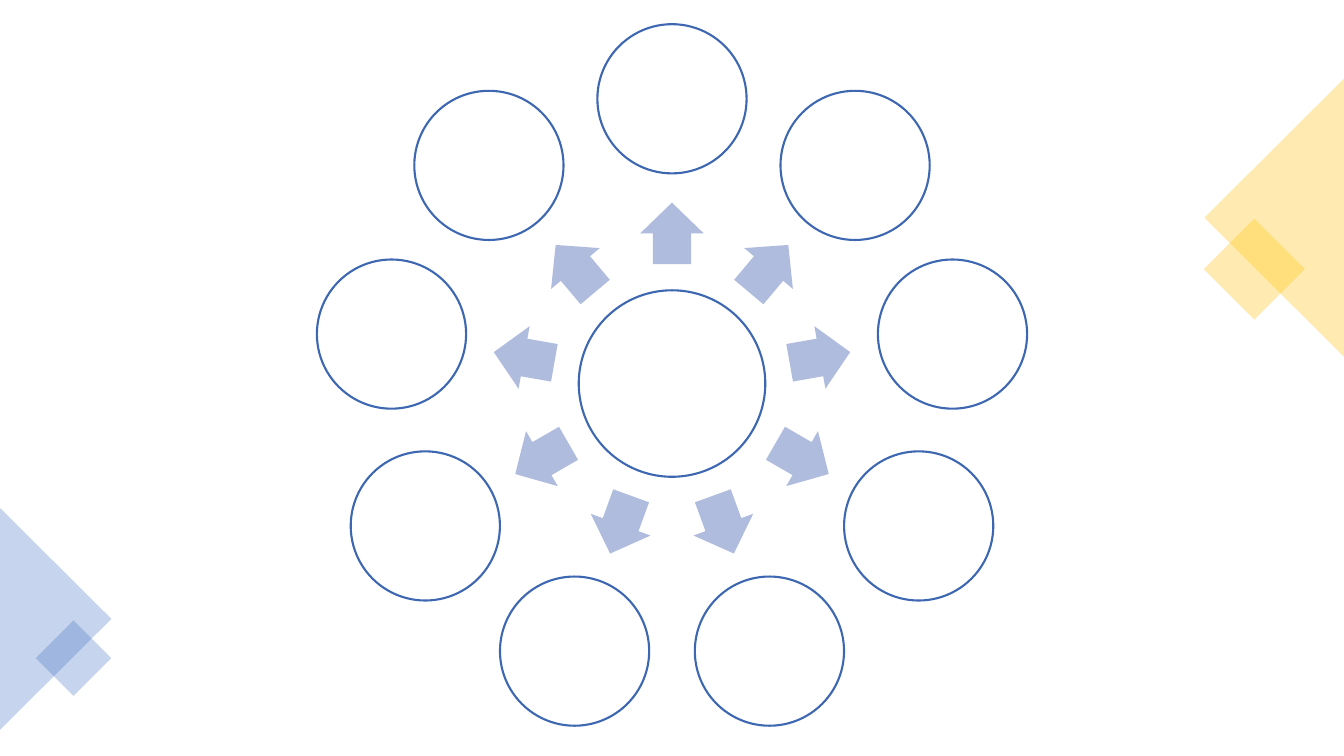
"""Build a slide with a radial diagram of nine circles around a hub."""
from math import cos, radians, sin

from lxml import etree
from pptx import Presentation
from pptx.dml.color import RGBColor
from pptx.enum.shapes import MSO_SHAPE
from pptx.oxml.ns import qn
from pptx.util import Inches, Pt

RECTANGLE = MSO_SHAPE.RECTANGLE
TRIANGLE = MSO_SHAPE.ISOSCELES_TRIANGLE
CIRCLE = MSO_SHAPE.OVAL
ARROW = MSO_SHAPE.RIGHT_ARROW

COLORS = {
    "gold": "FFC000",
    "blue": "4472C4",
    "outline": "3E67B2",
    "arrow": "B0BCDE",
    "white": "FFFFFF",
}

CENTER_X, CENTER_Y = 6.665, 3.805
HUB_SIZE = 1.85
CIRCLE_SIZE = 1.48
CIRCLE_RADIUS = 2.825
ARROW_RADIUS = 1.49
CIRCLE_COUNT = 9


def add_figure(shapes, kind, center_x, center_y, width, height, fill,
               line=None, rotation=0, opacity=None):
    """Add a preset shape centred on a point and return it."""
    figure = shapes.add_shape(
        kind, Inches(center_x - width / 2), Inches(center_y - height / 2),
        Inches(width), Inches(height))
    figure.shadow.inherit = False
    figure.rotation = rotation
    figure.fill.solid()
    figure.fill.fore_color.rgb = RGBColor.from_string(COLORS[fill])
    if line:
        figure.line.color.rgb = RGBColor.from_string(COLORS[line])
        figure.line.width = Pt(1.5)
    else:
        figure.line.fill.background()
    if opacity is not None:
        color = figure.fill._xPr.find(qn("a:solidFill"))[0]
        etree.SubElement(color, qn("a:alpha"), val=str(opacity * 1000))
    return figure


deck = Presentation()
deck.slide_width = Inches(13.33)
deck.slide_height = Inches(7.5)
page = deck.slides.add_slide(deck.slide_layouts[6])

corner_figures = [
    (RECTANGLE, 12.44, 2.67, 0.71, 0.71, "gold", 45),
    (TRIANGLE, 12.64, 2.16, 2.77, 1.39, "gold", 270),
    (TRIANGLE, 0.55, 6.14, 2.21, 1.11, "blue", 90),
    (RECTANGLE, 0.73, 6.53, 0.53, 0.53, "blue", 45),
]
for kind, center_x, center_y, width, height, fill, rotation in corner_figures:
    add_figure(page.shapes, kind, center_x, center_y, width, height, fill,
               rotation=rotation, opacity=30)

diagram = page.shapes.add_group_shape().shapes
add_figure(diagram, CIRCLE, CENTER_X, CENTER_Y, HUB_SIZE, HUB_SIZE,
           "white", line="outline")

for index in range(CIRCLE_COUNT):
    degrees = (270 + index * 360 / CIRCLE_COUNT) % 360
    across, down = cos(radians(degrees)), sin(radians(degrees))
    arrow = add_figure(diagram, ARROW, CENTER_X + ARROW_RADIUS * across,
                       CENTER_Y + ARROW_RADIUS * down, 0.61, 0.63,
                       "arrow", rotation=degrees)
    arrow.adjustments[0] = 0.6
    arrow.adjustments[1] = 0.5
    add_figure(diagram, CIRCLE, CENTER_X + CIRCLE_RADIUS * across,
               CENTER_Y + CIRCLE_RADIUS * down, CIRCLE_SIZE, CIRCLE_SIZE,
               "white", line="outline")

deck.save("out.pptx")
